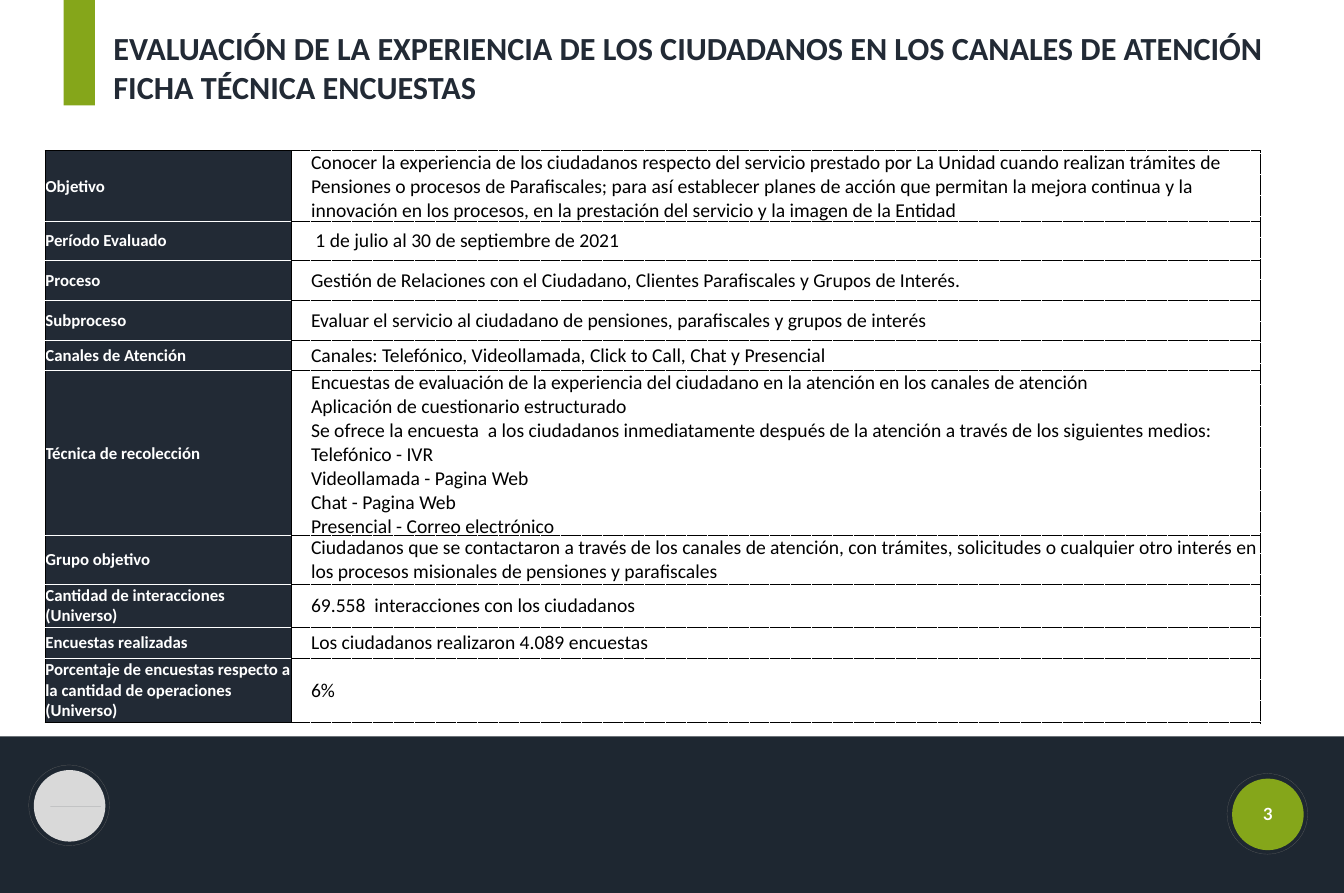
import math
from lxml import etree
from pptx import Presentation
from pptx import util as u
from pptx.dml.color import RGBColor
from pptx.enum import dml, shapes, text
from pptx.oxml import ns

# Content
TITLE = [
    "EVALUACIÓN DE LA EXPERIENCIA DE LOS CIUDADANOS EN LOS CANALES DE ATENCIÓN",
    "FICHA TÉCNICA ENCUESTAS",
]
PAGE_NUMBER = "3"
# label, lines of detail, row height
SURVEY_ROWS = [
    ("Objetivo", [
        "Conocer la experiencia de los ciudadanos respecto del servicio prestado por La Unidad "
        "cuando realizan trámites de Pensiones o procesos de Parafiscales; para así establecer "
        "planes de acción que permitan la mejora continua y la innovación en los procesos, en la "
        "prestación del servicio y la imagen de la Entidad"], 1.31),
    ("Período Evaluado", [" 1 de julio al 30 de septiembre de 2021"], 0.76),
    ("Proceso", ["Gestión de Relaciones con el Ciudadano, Clientes Parafiscales y Grupos de Interés."], 0.8),
    ("Subproceso", ["Evaluar el servicio al ciudadano de pensiones, parafiscales y grupos de interés"], 0.8),
    ("Canales de Atención", ["Canales: Telefónico, Videollamada, Click to Call, Chat y Presencial"], 0.59),
    ("Técnica de recolección", [
        "Encuestas de evaluación de la experiencia del ciudadano en la atención en los canales de atención",
        "Aplicación de cuestionario estructurado",
        "Se ofrece la encuesta  a los ciudadanos inmediatamente después de la atención "
        "a través de los siguientes medios:",
        "Telefónico - IVR",
        "Videollamada - Pagina Web",
        "Chat - Pagina Web",
        "Presencial - Correo electrónico"], 2.55),
    ("Grupo objetivo", [
        "Ciudadanos que se contactaron a través de los canales de atención, con trámites, solicitudes "
        "o cualquier otro interés en los procesos misionales de pensiones y parafiscales"], 0.96),
    ("Cantidad de interacciones (Universo)", ["69.558  interacciones con los ciudadanos"], 0.86),
    ("Encuestas realizadas", ["Los ciudadanos realizaron 4.089 encuestas"], 0.61),
    ("Porcentaje de encuestas respecto a la cantidad de operaciones (Universo)", ["6%"], 1.28),
]
COLUMN_WIDTHS = [4.88, 19.22]
NAVY, FOOTER, GREEN, GRAY = "222A35", "1E2731", "85A61A", "D9D9D9"
BLACK, WHITE, RING = "000000", "FFFFFF", "666666"

# Pencil outlines: tip, three stripes of the body, and the eraser as a tilted oval
ERASER_CENTER, ERASER_RADII = (1.645, 15.77), (0.21, 0.09)


def eraser_point(angle):
    along = ERASER_RADII[0] * math.cos(angle)
    across = ERASER_RADII[1] * math.sin(angle)
    return (ERASER_CENTER[0] + (along - across) * math.sqrt(0.5),
            ERASER_CENTER[1] + (along + across) * math.sqrt(0.5))


PENCIL = [
    [(1.05, 16.18), (1.23, 16.37), (1.05, 16.37)],
    [(1.62, 15.93), (1.28, 16.26), (1.35, 16.33), (1.72, 15.97)],
    [(1.51, 15.84), (1.18, 16.16), (1.25, 16.23), (1.58, 15.9)],
    [(1.45, 15.7), (1.09, 16.07), (1.15, 16.14), (1.49, 15.8)],
    [eraser_point(math.radians(step)) for step in range(0, 360, 12)],
]


def color(value):
    return RGBColor.from_string(value)


def box(*lengths):
    return [u.Inches(length) for length in lengths]


def paint(shape, fill):
    shape.shadow.inherit = False
    shape.fill.solid()
    shape.fill.fore_color.rgb = color(fill)
    shape.line.fill.background()


def add_filled(slide, kind, place, fill):
    shape = slide.shapes.add_shape(kind, *box(*place))
    paint(shape, fill)
    return shape


def format_text(frame, size, font_color, name="Calibri", bold=True):
    for paragraph in frame.paragraphs:
        for run in paragraph.runs:
            font = run.font
            font.size, font.name, font.bold = u.Pt(size), name, bold
            font.color.rgb = color(font_color)


def add_badge(slide, left, top, fill):
    oval = shapes.MSO_SHAPE.OVAL
    add_filled(slide, oval, (left, top, 1.42, 1.42), fill)
    ring = add_filled(slide, oval, (left - 0.1, top - 0.1, 1.6, 1.6), fill)
    ring.fill.background()
    ring.line.color.rgb = color(RING)
    ring.line.width = u.Pt(0.25)
    ring.line.dash_style = dml.MSO_LINE.SQUARE_DOT


def add_border(cell, side, line_color, dash):
    line = etree.SubElement(cell._tc.get_or_add_tcPr(), ns.qn("a:ln" + side), w=str(u.Pt(1)))
    fill = etree.SubElement(line, ns.qn("a:solidFill"))
    etree.SubElement(fill, ns.qn("a:srgbClr"), val=line_color)
    etree.SubElement(line, ns.qn("a:prstDash"), val=dash)


def fill_cell(cell, lines, size, font_color, bold, borders):
    cell.text_frame.text = "\n".join(lines)
    format_text(cell.text_frame, size, font_color, bold=bold)
    cell.vertical_anchor = text.MSO_ANCHOR.MIDDLE
    cell.margin_left = cell.margin_right = cell.margin_top = u.Inches(0.01)
    cell.margin_bottom = 0
    for side, (line_color, dash) in borders.items():
        add_border(cell, side, line_color, dash)


def add_survey_table(slide):
    heights = [height for _, _, height in SURVEY_ROWS]
    place = box(0.89, 2.99, sum(COLUMN_WIDTHS), sum(heights))
    table = slide.shapes.add_table(len(SURVEY_ROWS), 2, *place).table
    table.first_row = table.horz_banding = False
    for column, width in zip(table.columns, COLUMN_WIDTHS):
        column.width = u.Inches(width)

    solid, dotted, white = (BLACK, "solid"), (BLACK, "dot"), (WHITE, "solid")
    last = len(SURVEY_ROWS) - 1
    for index, (label, details, height) in enumerate(SURVEY_ROWS):
        table.rows[index].height = u.Inches(height)
        label_cell, detail_cell = table.cell(index, 0), table.cell(index, 1)
        fill_cell(label_cell, [label], 24, WHITE, True, {
            "L": solid, "R": solid,
            "T": solid if index == 0 else white,
            "B": solid if index == last else white})
        label_cell.fill.solid()
        label_cell.fill.fore_color.rgb = color(NAVY)

        fill_cell(detail_cell, details, 28, BLACK, False,
                  {"L": solid, "R": dotted, "T": dotted, "B": dotted})
        detail_cell.fill.background()
        for paragraph in detail_cell.text_frame.paragraphs:
            properties = paragraph._p.get_or_add_pPr()
            properties.set("marL", str(u.Inches(0.39)))
            properties.set("indent", "0")


def add_pencil(slide):
    scale = u.Inches(1)
    builder = slide.shapes.build_freeform(*PENCIL[0][0], scale=scale)
    for index, outline in enumerate(PENCIL):
        if index:
            builder.move_to(*outline[0])
        builder.add_line_segments(outline[1:], close=True)
    paint(builder.convert_to_shape(), NAVY)


def main():
    presentation = Presentation()
    presentation.slide_width, presentation.slide_height = box(26.66, 17.72)
    slide = presentation.slides.add_slide(presentation.slide_layouts[5])

    # Footer with its badges
    rectangle = shapes.MSO_SHAPE.RECTANGLE
    add_filled(slide, rectangle, (0, 14.61, 26.66, 3.11), FOOTER)
    add_badge(slide, 0.67, 15.28, GRAY)
    add_pencil(slide)
    add_badge(slide, 24.44, 15.45, GREEN)
    number = slide.shapes.add_textbox(*box(24.52, 15.85, 1.26, 0.61)).text_frame
    number.word_wrap = True
    number.margin_left = number.margin_right = u.Inches(0.2)
    number.margin_top = number.margin_bottom = u.Inches(0.1)
    number.text = PAGE_NUMBER
    number.paragraphs[0].alignment = text.PP_ALIGN.CENTER
    format_text(number, 24, WHITE, "Lato")

    # Survey data sheet
    add_survey_table(slide)

    # Title with its green bar
    add_filled(slide, rectangle, (1.26, 0, 0.62, 2.09), GREEN)
    title = slide.shapes.title
    title.left, title.top, title.width, title.height = box(2.15, 0.51, 23.42, 1.65)
    frame = title.text_frame
    frame.text = "\n".join(TITLE)
    frame.word_wrap = False
    frame.auto_size = text.MSO_AUTO_SIZE.SHAPE_TO_FIT_TEXT
    frame.vertical_anchor = text.MSO_ANCHOR.TOP
    for paragraph in frame.paragraphs:
        paragraph.alignment = text.PP_ALIGN.LEFT
    format_text(frame, 46, NAVY)

    presentation.save("out.pptx")


if __name__ == "__main__":
    main()
